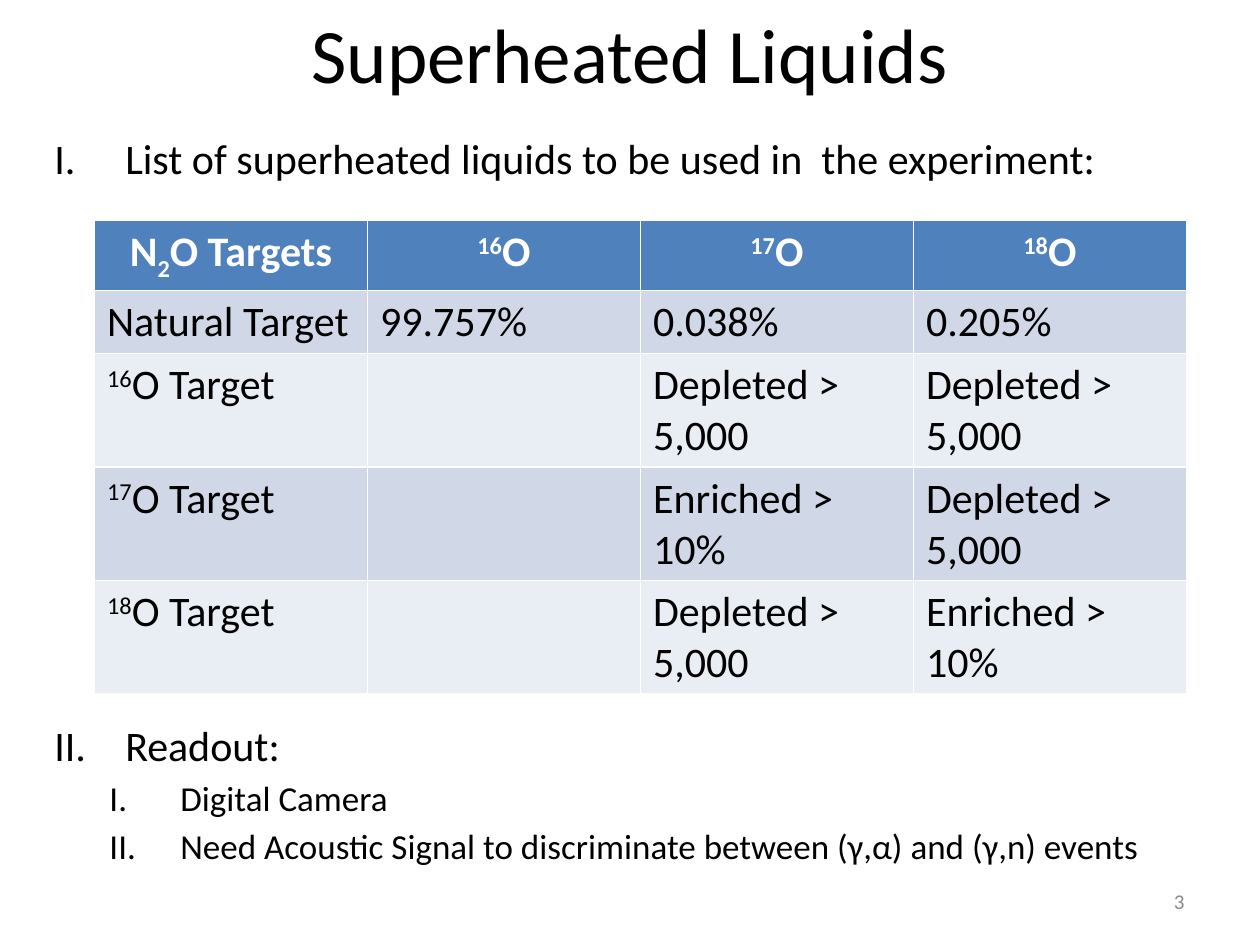
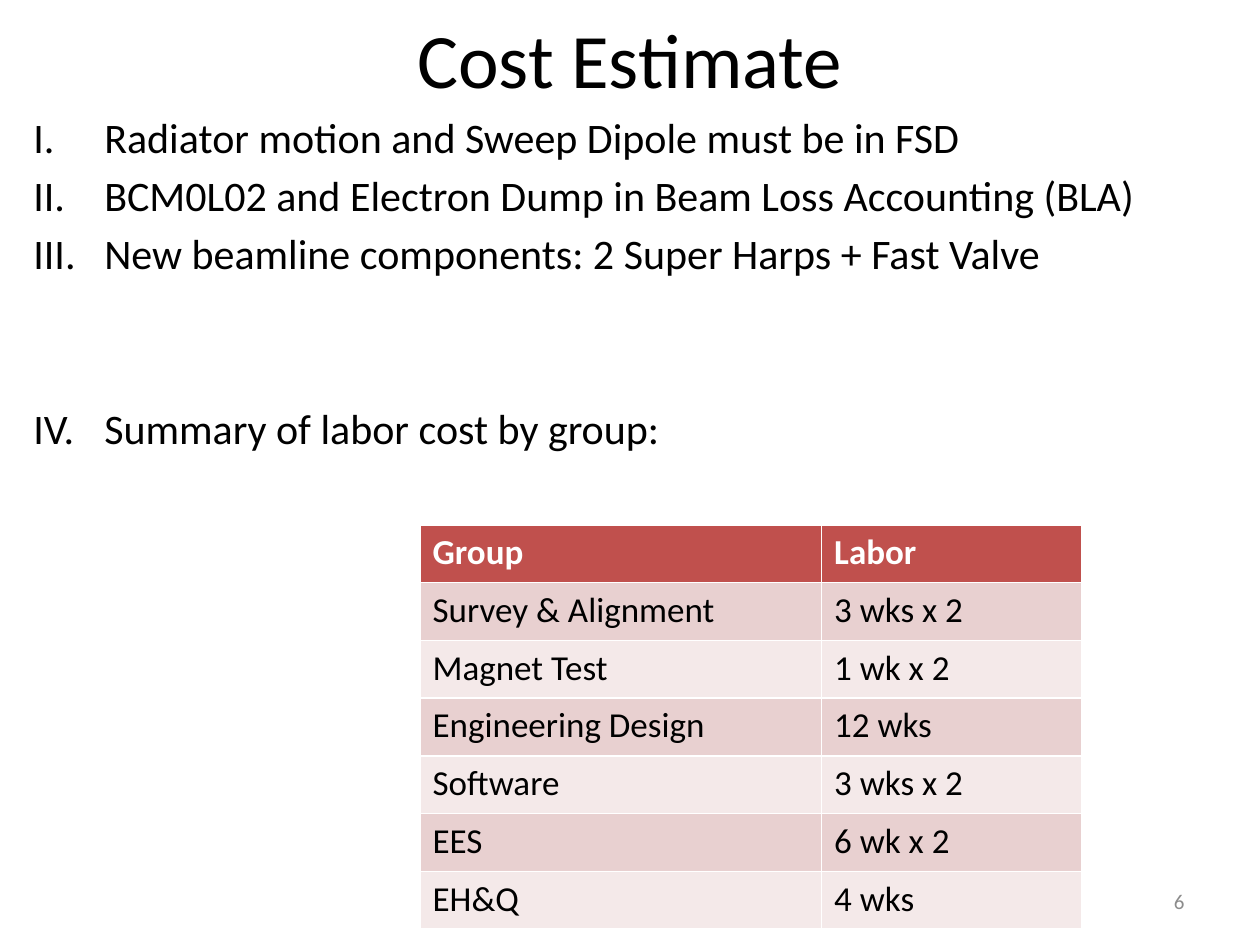
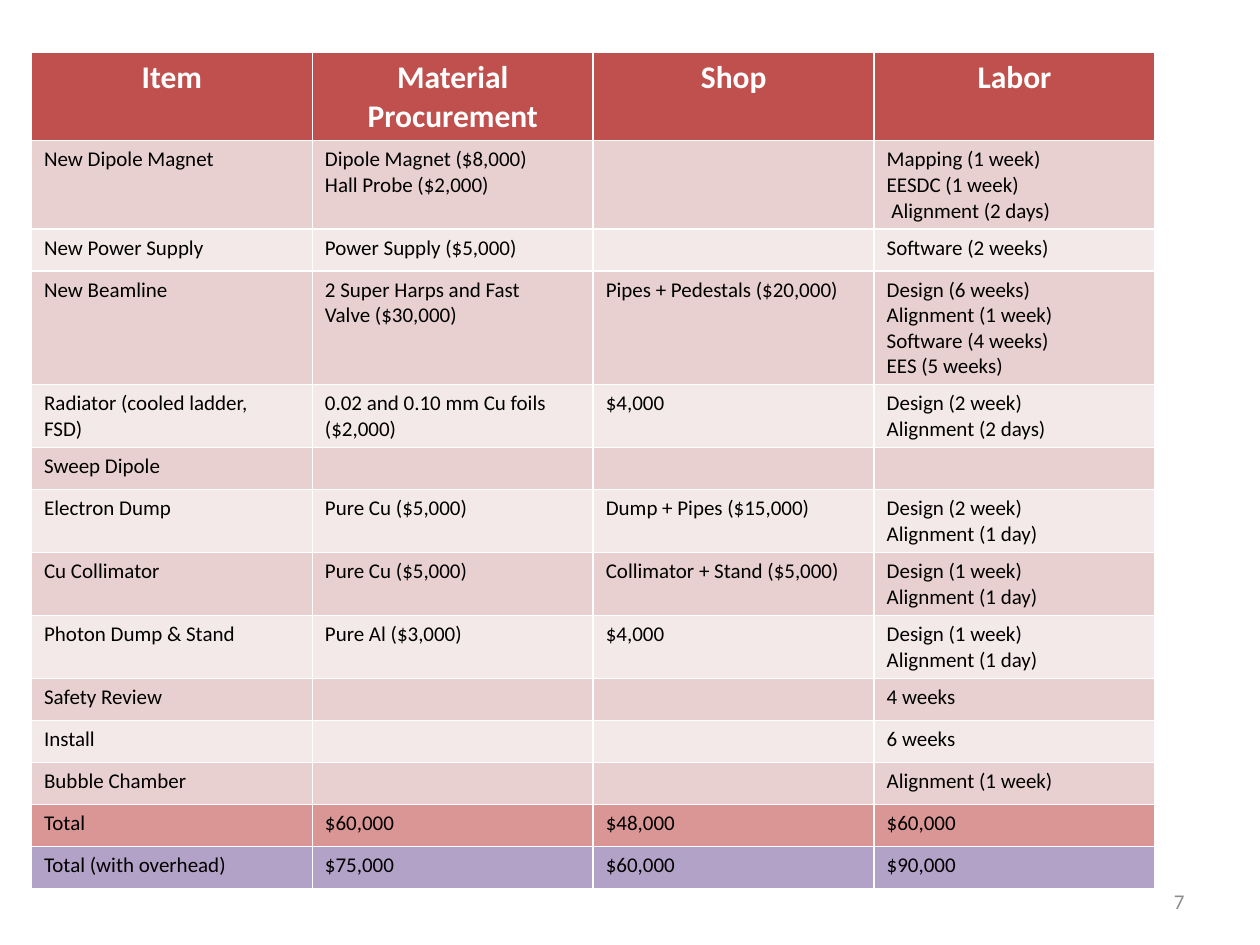
from lxml.etree import SubElement
from pptx import Presentation
from pptx.dml.color import RGBColor
from pptx.enum.text import MSO_ANCHOR as Anchor, PP_ALIGN as Align
from pptx.oxml.ns import qn
from pptx.util import Emu, Inches, Pt

COLS, ROWS = 120, 90
UNIT = Inches(10) / COLS
FONT = "Calibri"
BLACK, WHITE, GREY = "000000", "FFFFFF", "8C8C8C"
BLUE = ("4F81BD", "D0D8E8", "E9EDF4")
RED = ("C0504D", "E8D0D0", "F4E9E9")
ROSE, MAUVE = "D99694", "B3A2C7"
SHIFT = {"^": "30000", "_": "-25000"}


def color(code):
    return RGBColor.from_string(code)


def grid(*marks):
    return [Emu(round(mark * UNIT)) for mark in marks]


class Deck:
    def __init__(self):
        self.show = Presentation()
        self.show.slide_width, self.show.slide_height = grid(COLS, ROWS)
        self.slide = None

    def page(self, number):
        self.slide = self.show.slides.add_slide(self.show.slide_layouts[6])
        frame = self.box(86, 83.4, 28, 4.8, Anchor.MIDDLE)
        self.line(frame.paragraphs[0], str(number), 12, GREY, Align.RIGHT)

    def box(self, left, top, width, height, anchor=Anchor.TOP):
        shape = self.slide.shapes.add_textbox(*grid(left, top, width, height))
        frame = shape.text_frame
        frame.word_wrap = True
        frame.vertical_anchor = anchor
        return frame

    def line(self, para, text, size, ink=BLACK, align=Align.LEFT, bold=False):
        para.alignment = align
        font = para.font
        font.name, font.size, font.bold = FONT, Pt(size), bold
        font.color.rgb = color(ink)
        for part in filter(None, text.split("|")):
            run = para.add_run()
            run.text = part.lstrip("^_")
            if part[0] in SHIFT:
                run._r.get_or_add_rPr().set("baseline", SHIFT[part[0]])
        if not text:
            SubElement(para._p, qn("a:endParaRPr"), sz=str(size * 100))

    def title(self, text, height):
        frame = self.box(6, 0, 108, height, Anchor.MIDDLE)
        self.line(frame.paragraphs[0], text, 44, align=Align.CENTER)

    def outline(self, left, top, width, items):
        frame = self.box(left, top, width, 76)
        for index, (level, skip, text) in enumerate(items):
            para = frame.add_paragraph() if index else frame.paragraphs[0]
            size = 20 if level else 24
            self.line(para, text, size)
            para.level = level
            para.space_before = Pt(round(size * (0.18 + 1.4 * skip), 1))
            props = para._p.get_or_add_pPr()
            margin, indent = grid(12 if level else 6.75, -6.75)
            props.set("marL", str(margin))
            props.set("indent", str(indent))
            mark = props.makeelement(qn("a:buAutoNum"), {"type": "romanUcPeriod"})
            props.find(qn("a:spcBef")).addnext(mark)

    def table(self, left, top, widths, height, rows, tones, size,
              head=None, align=Align.LEFT, extra=()):
        frame = self.slide.shapes.add_table(
            len(rows), len(widths),
            *grid(left, top, sum(widths), height * len(rows)))
        table = frame.table
        for column, width in zip(table.columns, grid(*widths)):
            column.width = width
        plain = len(rows) - len(extra) - 1
        fills = [tones[0]] + [tones[1 + n % 2] for n in range(plain)] + list(extra)
        for y, (row, tone) in enumerate(zip(rows, fills)):
            look = (size, BLACK) if y else (head or size, WHITE, align, True)
            for x, text in enumerate(row):
                cell = table.cell(y, x)
                cell.fill.solid()
                cell.fill.fore_color.rgb = color(tone)
                body = cell.text_frame
                for n, piece in enumerate(text.split("\n")):
                    para = body.add_paragraph() if n else body.paragraphs[0]
                    self.line(para, piece, *look)


def liquids(deck):
    deck.page(3)
    deck.outline(4, 12, 114, [
        (0, 0, "List of superheated liquids to be used in  the experiment:"),
        (0, 9, "Readout:"),
        (1, 0, "Digital Camera"),
        (1, 0, "Need Acoustic Signal to discriminate between (γ,α) and (γ,n) events"),
    ])
    deck.title("Superheated Liquids", 10)
    less, more = "Depleted > 5,000", "Enriched > 10%"
    deck.table(9, 21, [26] * 4, 4.9, [
        ("N|_2|O Targets", "^16|O", "^17|O", "^18|O"),
        ("Natural Target", "99.757%", "0.038%", "0.205%"),
        ("^16|O Target", "", less, less),
        ("^17|O Target", "", more, less),
        ("^18|O Target", "", less, more),
    ], BLUE, 24, align=Align.CENTER)


def labor(deck):
    deck.page(6)
    deck.title("Cost Estimate", 11)
    deck.outline(2, 10, 118, [
        (0, 0, "Radiator motion and Sweep Dipole must be in FSD"),
        (0, 0, "BCM0L02 and Electron Dump in Beam Loss Accounting (BLA)"),
        (0, 0, "New beamline components: 2 Super Harps + Fast Valve"),
        (0, 2, "Summary of labor cost by group:"),
    ])
    deck.table(40, 50, [38.25, 24.75], 5.5, [
        ("Group", "Labor"),
        ("Survey & Alignment", "3 wks x 2"),
        ("Magnet Test", "1 wk x 2"),
        ("Engineering Design", "12 wks"),
        ("Software", "3 wks x 2"),
        ("EES", "6 wk x 2"),
        ("EH&Q", "4 wks"),
    ], RED, 20)


def costs(deck):
    deck.page(7)
    deck.table(3, 5, [26.75] * 4, 4, [
        ("Item", "Material\nProcurement", "Shop", "Labor"),
        ("New Dipole Magnet", "Dipole Magnet ($8,000)\nHall Probe ($2,000)", "",
         "Mapping (1 week)\nEESDC (1 week)\n Alignment (2 days)"),
        ("New Power Supply", "Power Supply ($5,000)", "", "Software (2 weeks)"),
        ("New Beamline", "2 Super Harps and Fast\nValve ($30,000)",
         "Pipes + Pedestals ($20,000)",
         "Design (6 weeks)\nAlignment (1 week)\nSoftware (4 weeks)\nEES (5 weeks)"),
        ("Radiator (cooled ladder,\nFSD)", "0.02 and 0.10 mm Cu foils ($2,000)",
         "$4,000", "Design (2 week)\nAlignment (2 days)"),
        ("Sweep Dipole", "", "", ""),
        ("Electron Dump", "Pure Cu ($5,000)", "Dump + Pipes ($15,000)",
         "Design (2 week)\nAlignment (1 day)"),
        ("Cu Collimator", "Pure Cu ($5,000)", "Collimator + Stand ($5,000)",
         "Design (1 week)\nAlignment (1 day)"),
        ("Photon Dump & Stand", "Pure Al ($3,000)", "$4,000",
         "Design (1 week)\nAlignment (1 day)"),
        ("Safety Review", "", "", "4 weeks"),
        ("Install", "", "", "6 weeks"),
        ("Bubble Chamber", "", "", "Alignment (1 week)"),
        ("Total", "$60,000", "$48,000", "$60,000"),
        ("Total (with overhead)", "$75,000", "$60,000", "$90,000"),
    ], RED, 12, head=18, align=Align.CENTER, extra=(ROSE, MAUVE))


def main():
    deck = Deck()
    for build in (liquids, labor, costs):
        build(deck)
    deck.show.save("out.pptx")


if __name__ == "__main__":
    main()
